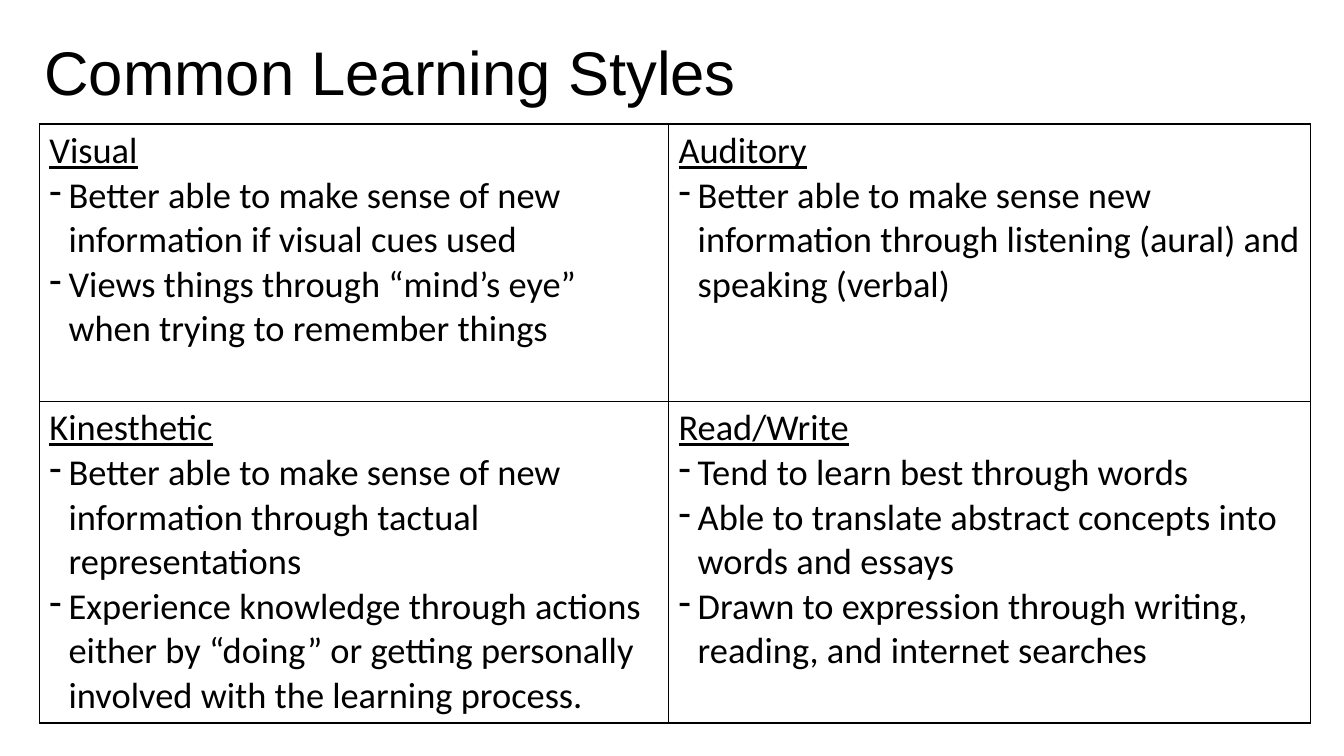
from lxml import etree
from pptx import Presentation
from pptx import util as u
from pptx.dml.color import RGBColor
from pptx.enum import text
from pptx.oxml import ns

BLACK = RGBColor(0x00, 0x00, 0x00)
TITLE_FONT = {"name": "Arial", "size": u.Pt(44)}
BODY_FONT = {"name": "Calibri", "size": u.Pt(26), "bold": False}
COL_WIDTHS = (6.24, 6.37)
ROW_HEIGHTS = (2.75, 3.19)
INDENT = 0.19

STYLES = [
    [
        ("Visual", [
            "Better able to make sense of new information if visual cues used",
            "Views things through “mind’s eye” when trying to remember things",
        ]),
        ("Auditory", [
            "Better able to make sense new information through listening (aural) and speaking (verbal)",
        ]),
    ],
    [
        ("Kinesthetic", [
            "Better able to make sense of new information through tactual representations",
            "Experience knowledge through actions either by “doing” or getting personally "
            "involved with the learning process.",
        ]),
        ("Read/Write", [
            "Tend to learn best through words",
            "Able to translate abstract concepts into words and essays",
            "Drawn to expression through writing, reading, and internet searches",
        ]),
    ],
]


def set_attrs(obj, values):
    for name, value in values.items():
        setattr(obj, name, value)


def set_font(font, values):
    set_attrs(font, values)
    font.color.rgb = BLACK


def add_title(s, left, top, width, height, title):
    sp = s.shapes.title
    set_attrs(sp, {"left": u.Inches(left), "top": u.Inches(top),
                   "width": u.Inches(width), "height": u.Inches(height)})
    tf = sp.text_frame
    set_attrs(tf, {"text": title, "word_wrap": True,
                   "auto_size": text.MSO_AUTO_SIZE.NONE,
                   "vertical_anchor": text.MSO_ANCHOR.MIDDLE})
    for side in ("left", "top", "right", "bottom"):
        setattr(tf, f"margin_{side}", u.Inches(0.05))
    p = tf.paragraphs[0]
    set_attrs(p, {"alignment": text.PP_ALIGN.LEFT, "line_spacing": 0.9})
    set_font(p.runs[0].font, TITLE_FONT)


def add_borders(cell):
    tc_pr = cell._tc.get_or_add_tcPr()
    for side in ("lnL", "lnR", "lnT", "lnB"):
        ln = etree.SubElement(tc_pr, ns.qn(f"a:{side}"), w=str(u.Pt(1)))
        fill = etree.SubElement(ln, ns.qn("a:solidFill"))
        etree.SubElement(fill, ns.qn("a:srgbClr"), val=str(BLACK))


def add_dash(p):
    p_pr = p._p.get_or_add_pPr()
    p_pr.set("marL", str(u.Inches(INDENT)))
    p_pr.set("indent", str(u.Inches(-INDENT)))
    etree.SubElement(p_pr, ns.qn("a:buChar"), char="-")


def fill_cell(cell, heading, points):
    add_borders(cell)
    cell.fill.background()
    tf = cell.text_frame
    p = tf.paragraphs[0]
    r = p.add_run()
    r.text = heading
    set_font(r.font, {**BODY_FONT, "underline": True})
    for point in points:
        p = tf.add_paragraph()
        add_dash(p)
        r = p.add_run()
        r.text = point
        set_font(r.font, BODY_FONT)


def add_styles_table(s, left, top):
    frame = s.shapes.add_table(
        len(ROW_HEIGHTS), len(COL_WIDTHS), u.Inches(left), u.Inches(top),
        u.Inches(sum(COL_WIDTHS)), u.Inches(sum(ROW_HEIGHTS)))
    table = frame.table
    set_attrs(table, {"first_row": False, "horz_banding": False})
    for col, width in zip(table.columns, COL_WIDTHS):
        col.width = u.Inches(width)
    for row, height, entries in zip(table.rows, ROW_HEIGHTS, STYLES):
        row.height = u.Inches(height)
        for cell, (heading, points) in zip(row.cells, entries):
            fill_cell(cell, heading, points)


def main():
    prs = Presentation()
    set_attrs(prs, {"slide_width": u.Inches(13.33), "slide_height": u.Inches(7.5)})
    s = prs.slides.add_slide(prs.slide_layouts[5])
    add_title(s, 0.39, 0.02, 11.96, 1.45, "Common Learning Styles")
    add_styles_table(s, 0.39, 1.23)
    prs.save("out.pptx")


if __name__ == "__main__":
    main()
